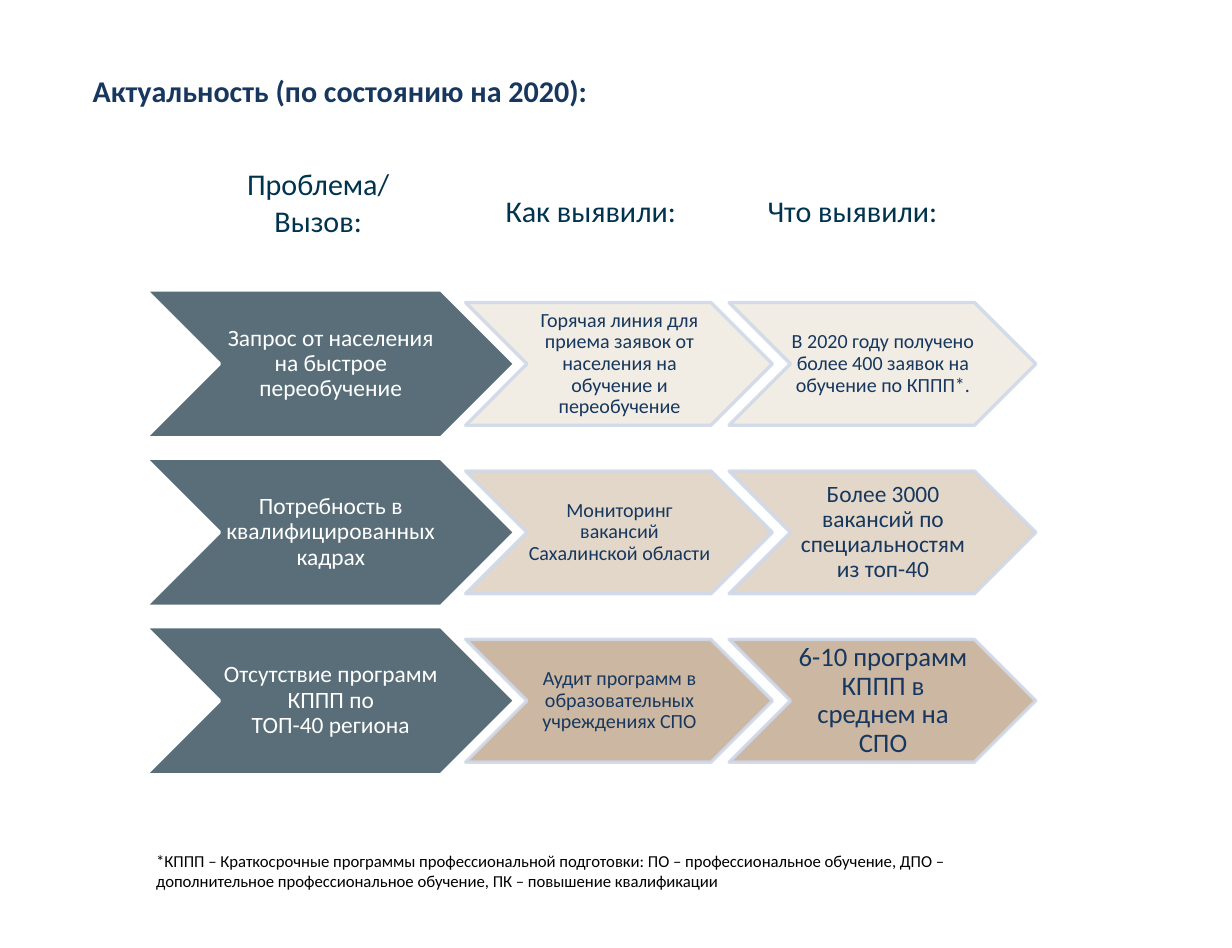
import dataclasses

import lxml.etree
import pptx
import pptx.dml.color
import pptx.enum.shapes
import pptx.enum.text
import pptx.oxml.ns
import pptx.util

Inches = pptx.util.Inches
Align = pptx.enum.text.PP_ALIGN
Anchor = pptx.enum.text.MSO_ANCHOR


@dataclasses.dataclass(frozen=True)
class Theme:
    font: str = "Calibri"
    navy: str = "17375E"
    heading: str = "00334E"
    slate: str = "596E79"
    white: str = "FFFFFF"
    black: str = "000000"
    outline: str = "D0D8E8"
    row_tints: tuple = ("F0ECE2", "DFD3C3", "C7B198")
    opacity: int = 90
    title_size: int = 18
    problem_size: int = 14
    note_size: int = 10
    line_width: int = 2


THEME = Theme()

# Problem, then (text, size) for how it was found and what was found
ROWS = [
    ("Запрос от населения на быстрое переобучение",
     ("Горячая линия для приема заявок от населения на обучение и переобучение", 12),
     ("В 2020 году получено более 400 заявок на обучение по КППП*.", 12)),
    ("Потребность в квалифицированных кадрах",
     ("Мониторинг вакансий Сахалинской области", 12),
     ("Более 3000 вакансий по специальностям из топ-40", 14)),
    ("Отсутствие программ КППП по\nТОП-40 региона",
     ("Аудит программ в образовательных учреждениях СПО", 12),
     ("6-10 программ КППП в среднем на СПО", 16)),
]
HEADINGS = [
    ("Проблема/\nВызов:", (1.73, 1.33, 1.83, 0.71)),
    ("Как выявили:", (4.02, 1.55, 1.78, 0.4)),
    ("Что выявили:", (6.14, 1.55, 1.89, 0.4)),
]
NOTE = ("*КППП – Краткосрочные программы профессиональной подготовки: "
        "ПО – профессиональное обучение, ДПО – дополнительное профессиональное "
        "обучение, ПК – повышение квалификации")


def rgb(color):
    return pptx.dml.color.RGBColor.from_string(color)


def write_text(shape, text, size, color, align=Align.LEFT, anchor=Anchor.TOP,
               bold=False, line_spacing=1.0):
    frame = shape.text_frame
    frame.word_wrap = True
    frame.auto_size = pptx.enum.text.MSO_AUTO_SIZE.NONE
    frame.vertical_anchor = anchor
    frame.text = text
    for paragraph in frame.paragraphs:
        paragraph.alignment = align
        paragraph.line_spacing = line_spacing
        paragraph.font.name = THEME.font
        paragraph.font.size = pptx.util.Pt(size)
        paragraph.font.bold = bold
        paragraph.font.color.rgb = rgb(color)


def set_opacity(shape, percent):
    """Make both the fill and the outline of the shape partly transparent."""
    qn = pptx.oxml.ns.qn
    for color in shape.fill._xPr.iter(qn("a:srgbClr")):
        lxml.etree.SubElement(color, qn("a:alpha")).set("val", str(percent * 1000))


def add_title(slide, box):
    title = slide.shapes.title
    title.left, title.top, title.width, title.height = map(Inches, box)
    write_text(title, "Актуальность (по состоянию на 2020):",
               THEME.title_size, THEME.navy, bold=True)


def add_heading(slide, box, text):
    shape = slide.shapes.add_shape(
        pptx.enum.shapes.MSO_SHAPE.RECTANGLE, *map(Inches, box))
    shape.shadow.inherit = False
    shape.fill.solid()
    shape.fill.fore_color.rgb = rgb(THEME.white)
    shape.line.fill.background()
    write_text(shape, text, THEME.title_size, THEME.heading, Align.CENTER)


def add_chevron(slide, box, text, size, fill, outline, color):
    chevron = slide.shapes.add_shape(
        pptx.enum.shapes.MSO_SHAPE.CHEVRON, *map(Inches, box))
    chevron.shadow.inherit = False
    chevron.fill.solid()
    chevron.fill.fore_color.rgb = rgb(fill)
    chevron.line.color.rgb = rgb(outline)
    chevron.line.width = pptx.util.Pt(THEME.line_width)
    frame = chevron.text_frame
    frame.margin_left = frame.margin_top = frame.margin_bottom = Inches(0.01)
    frame.margin_right = 0
    write_text(chevron, text, size, color, Align.CENTER, Anchor.MIDDLE,
               line_spacing=0.9)
    return chevron


def add_chevron_row(slide, box, row, tint):
    """Place a large problem chevron and two smaller finding chevrons."""
    left, top, width, height = box
    problem, *findings = row
    problem_width, finding_width, finding_height = 3.07, 2.55, 1.02
    add_chevron(slide, (left, top, problem_width, height), problem,
                THEME.problem_size, THEME.slate, THEME.white, THEME.white)
    last_left = left + width - finding_width
    finding_top = top + (height - finding_height) / 2
    for index, (text, size) in enumerate(findings):
        finding_left = last_left - 2.19 * (len(findings) - 1 - index)
        chevron = add_chevron(
            slide, (finding_left, finding_top, finding_width, finding_height),
            text, size, tint, THEME.outline, THEME.navy)
        set_opacity(chevron, THEME.opacity)


def add_diagram(slide, box):
    left, top, width, height = box
    row_height = 1.23
    pitch = (height - row_height) / (len(ROWS) - 1)
    for index, (row, tint) in enumerate(zip(ROWS, THEME.row_tints)):
        add_chevron_row(slide, (left, top + index * pitch, width, row_height),
                        row, tint)


def add_note(slide, box):
    note = slide.shapes.add_textbox(*map(Inches, box))
    write_text(note, NOTE, THEME.note_size, THEME.black)


def main():
    presentation = pptx.Presentation()
    presentation.slide_width = Inches(10.24)
    presentation.slide_height = Inches(7.88)
    slide = presentation.slides.add_slide(presentation.slide_layouts[5])
    add_title(slide, (0.67, 0.55, 8.74, 0.4))
    for text, box in HEADINGS:
        add_heading(slide, box, text)
    add_diagram(slide, (1.21, 2.41, 7.4, 4.03))
    add_note(slide, (1.2, 7.02, 7.56, 0.44))
    presentation.save("out.pptx")


if __name__ == "__main__":
    main()
